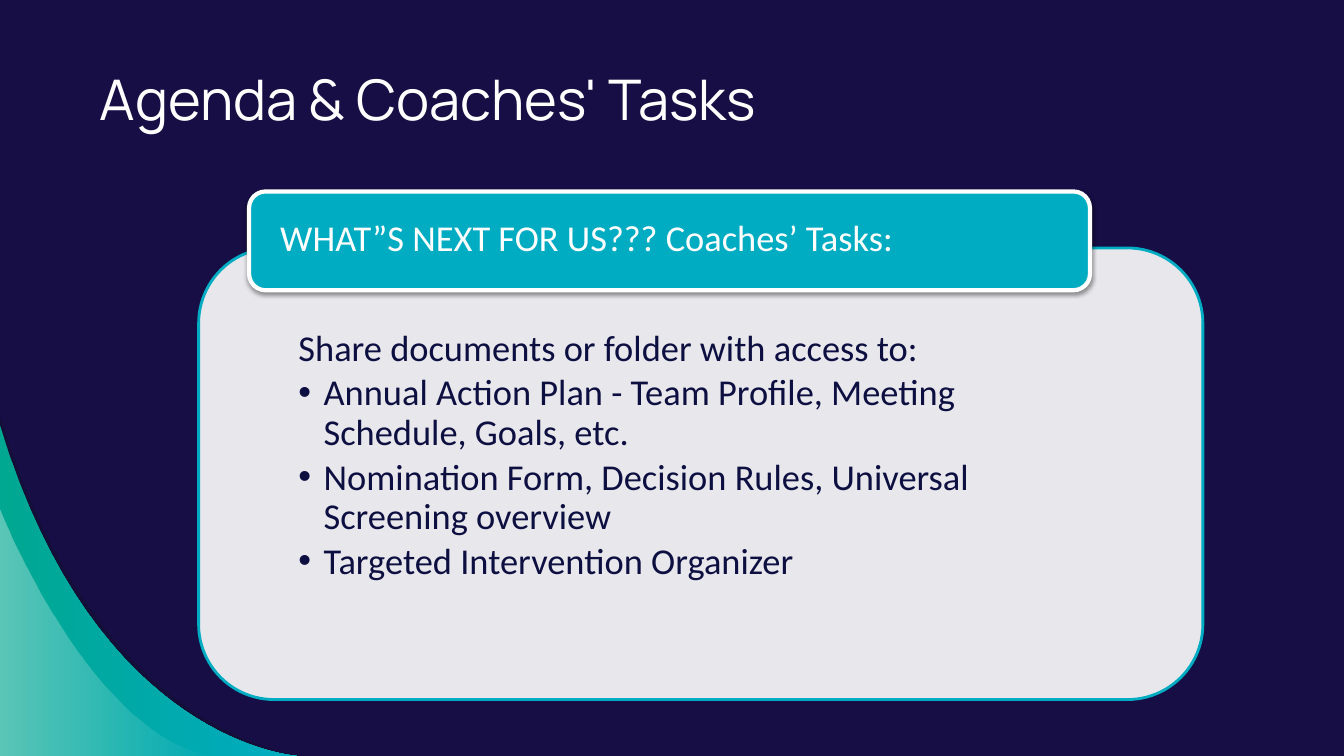
from lxml.etree import SubElement
from pptx import Presentation
from pptx.dml.color import RGBColor
from pptx.enum.shapes import MSO_SHAPE
from pptx.enum.text import MSO_ANCHOR, PP_ALIGN
from pptx.oxml.ns import qn
from pptx.util import Inches, Pt

WIDE, HIGH = Inches(13.33), Inches(7.5)
NAVY, TEAL, GREEN, WHITE, INK = "160E44", "00ACC2", "00A791", "FFFFFF", "0D0F41"
TASKS = [
    "Annual Action Plan - Team Profile, Meeting Schedule, Goals, etc.",
    "Nomination Form, Decision Rules, Universal Screening overview",
    "Targeted Intervention Organizer",
]


def color(code):
    return RGBColor.from_string(code)


def place(left, top, width, height):
    """Turn percentages of the slide into lengths."""
    return [round(share * side / 100) for share, side in
            zip((left, top, width, height), (WIDE, HIGH) * 2)]


def fade(shape, *alphas):
    """Give each fill colour of the shape its opacity in percent."""
    for tint, alpha in zip(shape.fill._xPr.iter(qn("a:srgbClr")), alphas):
        SubElement(tint, qn("a:alpha"), val=str(alpha * 1000))


def paint(shape, *codes):
    """Fill with one colour, or with a gradient from left to right."""
    shape.shadow.inherit = False
    if len(codes) == 1:
        shape.fill.solid()
        shape.fill.fore_color.rgb = color(codes[0])
        return
    shape.fill.gradient()
    shape.fill.gradient_angle = 0
    for stop, code in zip(shape.fill.gradient_stops, codes):
        stop.color.rgb = color(code)


def wave(slide, start, bend, pull, end, *codes):
    """Draw a corner shape under a cubic curve, in percent of the slide."""
    steps = 32
    dots = []
    for step in range(steps + 1):
        t = step / steps
        parts = ((1 - t) ** 3, 3 * t * (1 - t) ** 2, 3 * t * t * (1 - t), t ** 3)
        x, y = (sum(part * dot[axis] for part, dot in
                    zip(parts, (start, bend, pull, end))) for axis in (0, 1))
        dots.append((x * WIDE / 100, y * HIGH / 100))
    form = slide.shapes.build_freeform(*dots[0])
    form.add_line_segments(dots[1:] + [(0, HIGH)], close=True)
    shape = form.convert_to_shape()
    paint(shape, *codes)
    shape.line.fill.background()
    return shape


def card(slide, box, code, edge, weight):
    shape = slide.shapes.add_shape(MSO_SHAPE.ROUNDED_RECTANGLE, *place(*box))
    paint(shape, code)
    shape.line.color.rgb = color(edge)
    shape.line.width = Pt(weight)
    return shape


def drop(shape):
    """Cast a soft shadow straight down."""
    effects = shape._element.spPr.find(qn("a:effectLst"))
    shade = SubElement(effects, qn("a:outerShdw"), blurRad=str(Pt(3.1)),
                       dist=str(Pt(1.6)), dir="5400000", rotWithShape="0")
    tint = SubElement(shade, qn("a:srgbClr"), val="000000")
    SubElement(tint, qn("a:alpha"), val="38000")


def inset(frame, left, top, right, bottom):
    frame.word_wrap = True
    frame.margin_left, frame.margin_top = Inches(left), Inches(top)
    frame.margin_right, frame.margin_bottom = Inches(right), Inches(bottom)


def style(para, size, face, code):
    para.alignment = PP_ALIGN.LEFT
    para.font.size = Pt(size)
    para.font.name = face
    para.font.color.rgb = color(code)


def write(slide, box, lines, code, margins):
    frame = slide.shapes.add_textbox(*place(*box)).text_frame
    inset(frame, *margins)
    frame.text = "\n".join(lines)
    for para in frame.paragraphs:
        style(para, 26, "Calibri", code)
        para.line_spacing = 0.9
        para.space_after = Pt(4)
    return frame


def indent(para, mark):
    props = para._p.get_or_add_pPr()
    props.set("marL", str(Inches(0.25)))
    props.set("indent", str(-Inches(0.25)))
    if mark:
        SubElement(props, qn("a:buFont"), typeface="Arial")
        SubElement(props, qn("a:buChar"), char=mark)
        props.append(props.find(qn("a:defRPr")))


def head(slide, text):
    title = slide.shapes.title
    title.left, title.top, title.width, title.height = place(6.68, 6.8, 76.97, 12.27)
    frame = title.text_frame
    frame.text = text
    inset(frame, 0.1, 0.1, 0.1, 0.1)
    frame.vertical_anchor = MSO_ANCHOR.MIDDLE
    style(frame.paragraphs[0], 40, "Manrope", WHITE)


def main():
    deck = Presentation()
    deck.slide_width, deck.slide_height = WIDE, HIGH
    slide = deck.slides.add_slide(deck.slide_layouts[5])
    slide.background.fill.solid()
    slide.background.fill.fore_color.rgb = color(NAVY)

    shade = wave(slide, (0, 55.07), (7.35, 98.53), (22.73, 100), (22.73, 100), "12102F")
    fade(shade, 54)
    wave(slide, (0, 56.27), (7.13, 98.53), (22.13, 100), (22.13, 100), GREEN, TEAL)
    sheen = wave(slide, (0, 67.47), (0, 67.47), (6.83, 98), (16.2, 100), WHITE, WHITE)
    fade(sheen, 36, 0)

    panel = card(slide, (14.78, 32.8, 74.72, 59.73), WHITE, TEAL, 2)
    fade(panel, 90)
    body = write(slide, (16.43, 35.73, 71.49, 53.87),
                 ["Share documents or folder with access to:"] + TASKS,
                 INK, (0.77, 0.59, 0.77, 0.2))
    for row, para in enumerate(body.paragraphs):
        indent(para, "•" if row else None)

    drop(card(slide, (18.53, 25.33, 62.57, 13.07), TEAL, WHITE, 3))
    label = write(slide, (18.9, 25.87, 61.89, 11.73),
                  ["WHAT”S NEXT FOR US??? Coaches’ Tasks:"], WHITE, (0.26, 0, 0.26, 0))
    label.vertical_anchor = MSO_ANCHOR.MIDDLE
    head(slide, "Agenda & Coaches' Tasks")
    deck.save("out.pptx")


if __name__ == "__main__":
    main()
